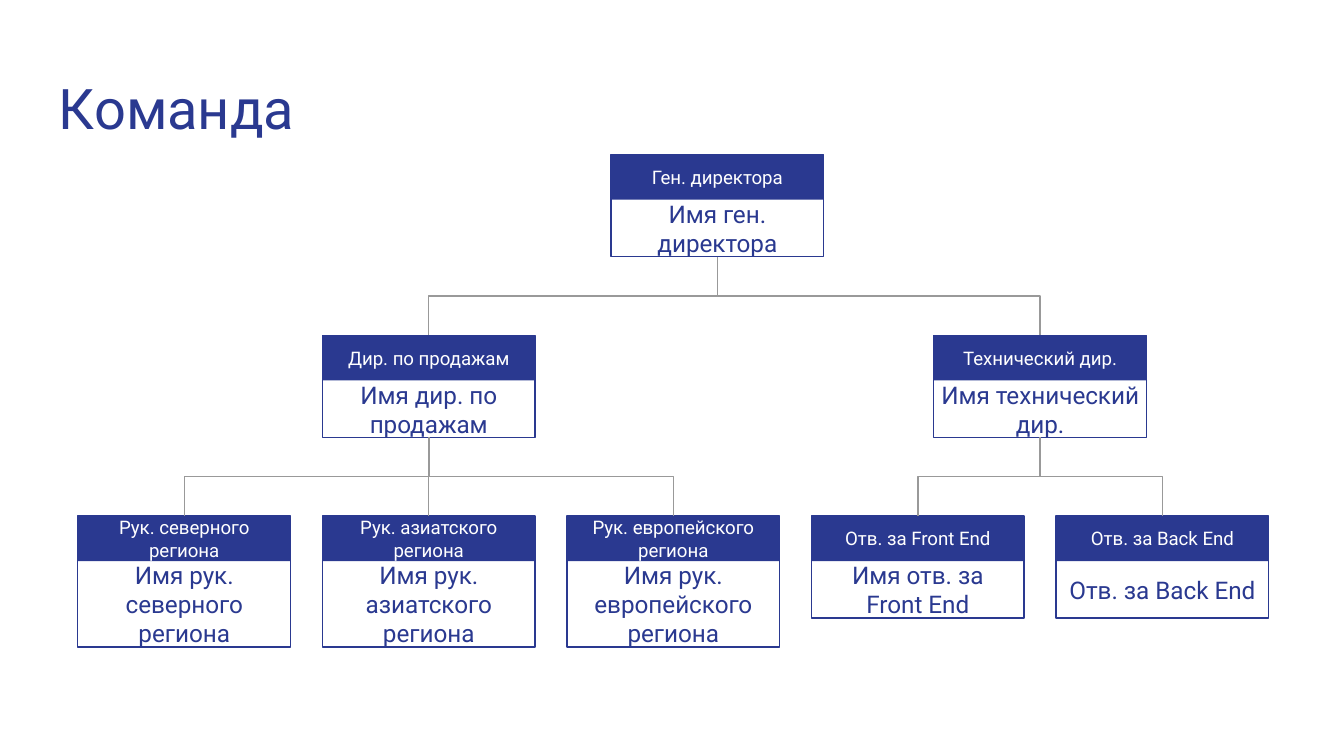
from dataclasses import dataclass

import lxml.etree
import pptx
import pptx.dml.color
import pptx.enum.shapes
import pptx.enum.text
import pptx.oxml.ns
import pptx.util

Pt = pptx.util.Pt
Align = pptx.enum.text.PP_ALIGN
Anchor = pptx.enum.text.MSO_ANCHOR
Connector = pptx.enum.shapes.MSO_CONNECTOR

COLOURS = {"navy": "2A3990", "white": "FFFFFF", "grey": "999999"}
FONT = "Roboto"
FIRST_LEFT, COLUMN_PITCH = 41.7, 131
FIRST_TOP, LEVEL_PITCH = 82.8, 96.8
CARD_WIDTH, HEADER_HEIGHT = 114, 24.2
CARD_HEIGHT, TALL_CARD_HEIGHT = 54.8, 70.2
LABEL_HEIGHT, INSET = 15.2, 7.2
LINE_WIDTH = 0.75
BOTTOM_SITE, TOP_SITE = 2, 0


@dataclass(frozen=True)
class Position:
    role: str
    name: str
    column: float
    level: int
    manager: str = ""
    height: float = CARD_HEIGHT
    name_width: float = CARD_WIDTH


@dataclass
class Card:
    frame: pptx.shapes.autoshape.Shape
    header: pptx.shapes.autoshape.Shape


TEAM = [
    Position("Ген. директорa", "Имя ген. директора", 2.18, 0),
    Position("Дир. по продажам", "Имя дир. по продажам", 1, 1, "Ген. директорa"),
    Position("Технический дир.", "Имя технический дир.", 3.5, 1, "Ген. директорa",
             name_width=126),
    Position("Рук. северного региона", "Имя рук. северного региона", 0, 2,
             "Дир. по продажам", TALL_CARD_HEIGHT),
    Position("Рук. азиатского региона", "Имя рук. азиатского региона", 1, 2,
             "Дир. по продажам", TALL_CARD_HEIGHT),
    Position("Рук. европейского региона", "Имя рук. европейского региона", 2, 2,
             "Дир. по продажам", TALL_CARD_HEIGHT),
    Position("Отв. за Front End", "Имя отв. за Front End", 3, 2, "Технический дир."),
    Position("Отв. за Back End", "Отв. за Back End", 4, 2, "Технический дир."),
]


def colour(name: str) -> pptx.dml.color.RGBColor:
    return pptx.dml.color.RGBColor.from_string(COLOURS[name])


def add_text(slide, text: str, left: float, top: float, width: float, height: float,
             size: float, font_colour: str, alignment: Align, anchor: Anchor) -> None:
    text_frame = slide.shapes.add_textbox(
        Pt(left), Pt(top), Pt(width), Pt(height)).text_frame
    text_frame.word_wrap = True
    text_frame.vertical_anchor = anchor
    text_frame.margin_left = text_frame.margin_right = Pt(INSET)
    text_frame.margin_top = text_frame.margin_bottom = Pt(INSET)
    text_frame.text = text
    paragraph = text_frame.paragraphs[0]
    paragraph.alignment = alignment
    font = paragraph.runs[0].font
    font.name, font.size = FONT, Pt(size)
    font.color.rgb = colour(font_colour)


def add_label(slide, text: str, centre_x: float, centre_y: float, width: float,
              size: float, font_colour: str) -> None:
    add_text(slide, text, centre_x - width / 2, centre_y - LABEL_HEIGHT / 2, width,
             LABEL_HEIGHT, size, font_colour, Align.CENTER, Anchor.MIDDLE)


def add_rectangle(slide, left: float, top: float, height: float,
                  filled: bool) -> pptx.shapes.autoshape.Shape:
    """Add a card-wide rectangle, either filled or outlined in navy."""
    shape = slide.shapes.add_shape(
        pptx.enum.shapes.MSO_SHAPE.RECTANGLE,
        Pt(left), Pt(top), Pt(CARD_WIDTH), Pt(height))
    shape.shadow.inherit = False
    if filled:
        shape.fill.solid()
        shape.fill.fore_color.rgb = colour("navy")
        shape.line.fill.background()
    else:
        shape.fill.background()
        shape.line.color.rgb = colour("navy")
        shape.line.width = Pt(LINE_WIDTH)
    return shape


def add_card(slide, position: Position) -> Card:
    left = FIRST_LEFT + position.column * COLUMN_PITCH
    top = FIRST_TOP + position.level * LEVEL_PITCH
    centre = left + CARD_WIDTH / 2
    frame = add_rectangle(slide, left, top, position.height, filled=False)
    header = add_rectangle(slide, left, top, HEADER_HEIGHT, filled=True)
    add_label(slide, position.role, centre, top + HEADER_HEIGHT / 2,
              CARD_WIDTH, 10, "white")
    add_label(slide, position.name, centre,
              top + (HEADER_HEIGHT + position.height) / 2,
              position.name_width, 13, "navy")
    return Card(frame, header)


def connect(slide, manager: Card, report: Card) -> None:
    """Join a manager's bottom side to a report's top side."""
    start_x = manager.frame.left + manager.frame.width // 2
    start_y = manager.frame.top + manager.frame.height
    end_x = report.header.left + report.header.width // 2
    end_y = report.header.top
    straight = start_x == end_x
    connector = slide.shapes.add_connector(
        Connector.STRAIGHT if straight else Connector.ELBOW,
        start_x, start_y, end_x, end_y)
    connector.begin_connect(manager.frame, BOTTOM_SITE)
    connector.end_connect(report.header, TOP_SITE)
    connector.line.color.rgb = colour("grey")
    connector.line.width = Pt(LINE_WIDTH)
    properties = connector._element.spPr
    lxml.etree.SubElement(properties, pptx.oxml.ns.qn("a:effectLst"))
    if not straight:
        turn_elbow(connector, start_x, start_y, end_x, end_y)


def turn_elbow(connector, start_x: int, start_y: int, end_x: int, end_y: int) -> None:
    """Rotate an elbow so that it leaves and arrives vertically."""
    drop, reach = end_y - start_y, abs(end_x - start_x)
    connector.left = (start_x + end_x - drop) // 2
    connector.top = (start_y + end_y - reach) // 2
    connector.width, connector.height = drop, reach
    to_right = end_x > start_x
    transform = connector._element.spPr.find(pptx.oxml.ns.qn("a:xfrm"))
    transform.set("rot", str((270 if to_right else 90) * 60000))
    transform.set("flipH", "1" if to_right else "0")
    transform.set("flipV", "0")


def main() -> None:
    presentation = pptx.Presentation()
    presentation.slide_width, presentation.slide_height = Pt(720), Pt(405)
    slide = presentation.slides.add_slide(presentation.slide_layouts[6])
    add_text(slide, "Команда", 24.5, 32.4, 671, 47.5, 30, "navy",
             Align.LEFT, Anchor.TOP)
    cards: dict[str, Card] = {}
    for position in TEAM:
        cards[position.role] = add_card(slide, position)
        if position.manager:
            connect(slide, cards[position.manager], cards[position.role])
    presentation.save("out.pptx")


if __name__ == "__main__":
    main()
